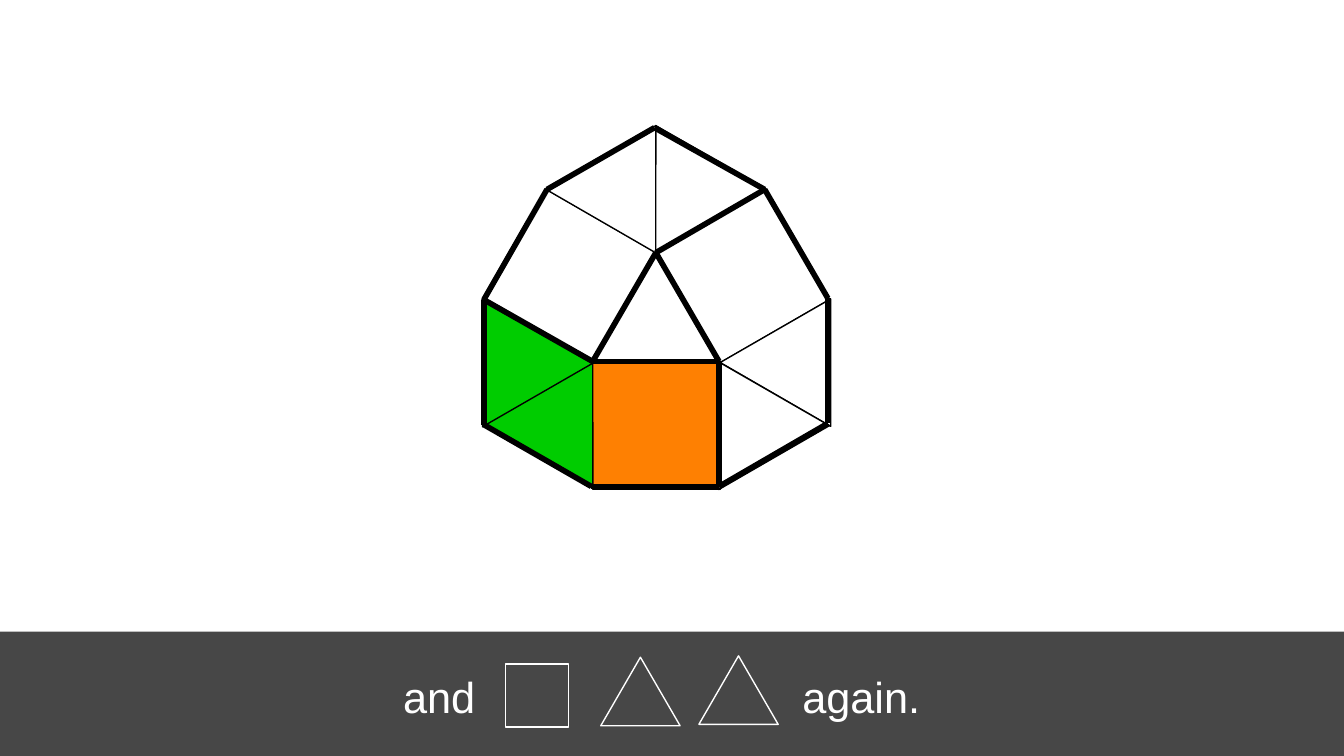
from lxml import etree
from pptx import Presentation
from pptx.dml.color import RGBColor
from pptx.enum.shapes import MSO_CONNECTOR, MSO_SHAPE
from pptx.enum.text import MSO_ANCHOR, MSO_AUTO_SIZE, PP_ALIGN
from pptx.oxml.ns import qn
from pptx.util import Inches, Pt

RECT, TRI = MSO_SHAPE.RECTANGLE, MSO_SHAPE.ISOSCELES_TRIANGLE
WHITE, BLACK, GREEN, ORANGE = "FFFFFF", "000000", "00CC00", "FE8002"
WIDE = 10
SIDE, RISE = 0.95, 0.82

# kind, left, top, turn, fill; places are relative to the net
TILES = [
    (TRI, 0.81, 0.93, 0, WHITE),
    (RECT, 1.45, 0.63, 330, WHITE),
    (RECT, 0.81, 1.74, 0, ORANGE),
    (RECT, 0.16, 0.63, 30, WHITE),
    (TRI, 0.13, 1.68, 30, GREEN),
    (TRI, -0.28, 1.46, 210, GREEN),
    (TRI, 0.6, -0.07, 30, WHITE),
    (TRI, 1.01, -0.07, 330, WHITE),
    (TRI, 1.9, 1.22, 30, WHITE),
    (TRI, 1.48, 1.69, 330, WHITE),
]
# A, B, C are the middle triangle; D to L go round the rim from upper left
NODES = {
    "A": (1.28, 0.93), "B": (0.81, 1.74), "C": (1.75, 1.74),
    "D": (0.47, 0.46), "E": (1.27, 0), "F": (2.09, 0.46),
    "G": (2.56, 1.27), "H": (2.56, 2.2), "I": (1.75, 2.67),
    "J": (0.8, 2.67), "K": (0, 2.21), "L": (0, 1.28),
}
EDGES = "DE EF FG GH HI IJ JK KL LD AB BC CA LB AF CI".split()


def color(code):
    return RGBColor.from_string(code)


def add_shape(slide, kind, box, fill=None, line=None, turn=0):
    shape = slide.shapes.add_shape(kind, *map(Inches, box))
    shape.shadow.inherit = False
    shape.rotation = turn
    for part, code in ((shape.fill, fill), (shape.line.fill, line)):
        if code:
            part.solid()
            part.fore_color.rgb = color(code)
        else:
            part.background()
    shape.line.width = Pt(0.75)
    return shape


def add_line(slide, start, end, width):
    line = slide.shapes.add_connector(
        MSO_CONNECTOR.STRAIGHT, *map(Inches, start + end))
    line.line.color.rgb = color(BLACK)
    line.line.width = Pt(width)
    etree.SubElement(line.element.spPr, qn("a:effectLst"))


def add_bar(slide, left, top, width, height):
    bar = add_shape(slide, RECT, (left, top, width, height), BLACK)
    tint = bar.element.spPr.find(".//" + qn("a:srgbClr"))
    etree.SubElement(tint, qn("a:alpha"), val="72000")

    title = slide.shapes.title
    title.left, title.top = Inches(left + 2.9), Inches(top + 0.01)
    title.width, title.height = Inches(4.08), Inches(height)
    bar.element.addnext(title.element)
    frame = title.text_frame
    frame.auto_size = MSO_AUTO_SIZE.NONE
    frame.vertical_anchor = MSO_ANCHOR.MIDDLE
    para = frame.paragraphs[0]
    para.alignment = PP_ALIGN.LEFT
    tabs = etree.SubElement(para._p.get_or_add_pPr(), qn("a:tabLst"))
    etree.SubElement(tabs, qn("a:tab"), pos=str(Inches(2.97)), algn="l")
    run = para.add_run()
    run.text = "and\tagain."
    run.font.name, run.font.size = "Arial", Pt(23.2)
    run.font.color.rgb = color(WHITE)

    for kind, x, y, wide, high in (
            (RECT, 3.76, 0.24, 0.47, 0.47),
            (TRI, 4.47, 0.19, 0.59, 0.51),
            (TRI, 5.2, 0.18, 0.59, 0.51)):
        add_shape(slide, kind, (left + x, top + y, wide, high), line=WHITE)


def add_net(slide, left, top):
    for kind, x, y, turn, fill in TILES:
        high = SIDE if kind == RECT else RISE
        add_shape(slide, kind, (left + x, top + y, SIDE, high),
                  fill, BLACK, turn)
    spots = {name: (left + x, top + y) for name, (x, y) in NODES.items()}
    for start, end in EDGES:
        add_line(slide, spots[start], spots[end], 3)


def main():
    deck = Presentation()
    deck.slide_width, deck.slide_height = Inches(WIDE), Inches(WIDE * 9 / 16)
    slide = deck.slides.add_slide(deck.slide_layouts[5])
    add_bar(slide, 0, 4.7, WIDE, 0.94)
    add_net(slide, 3.6, 0.95)
    deck.save("out.pptx")


if __name__ == "__main__":
    main()
